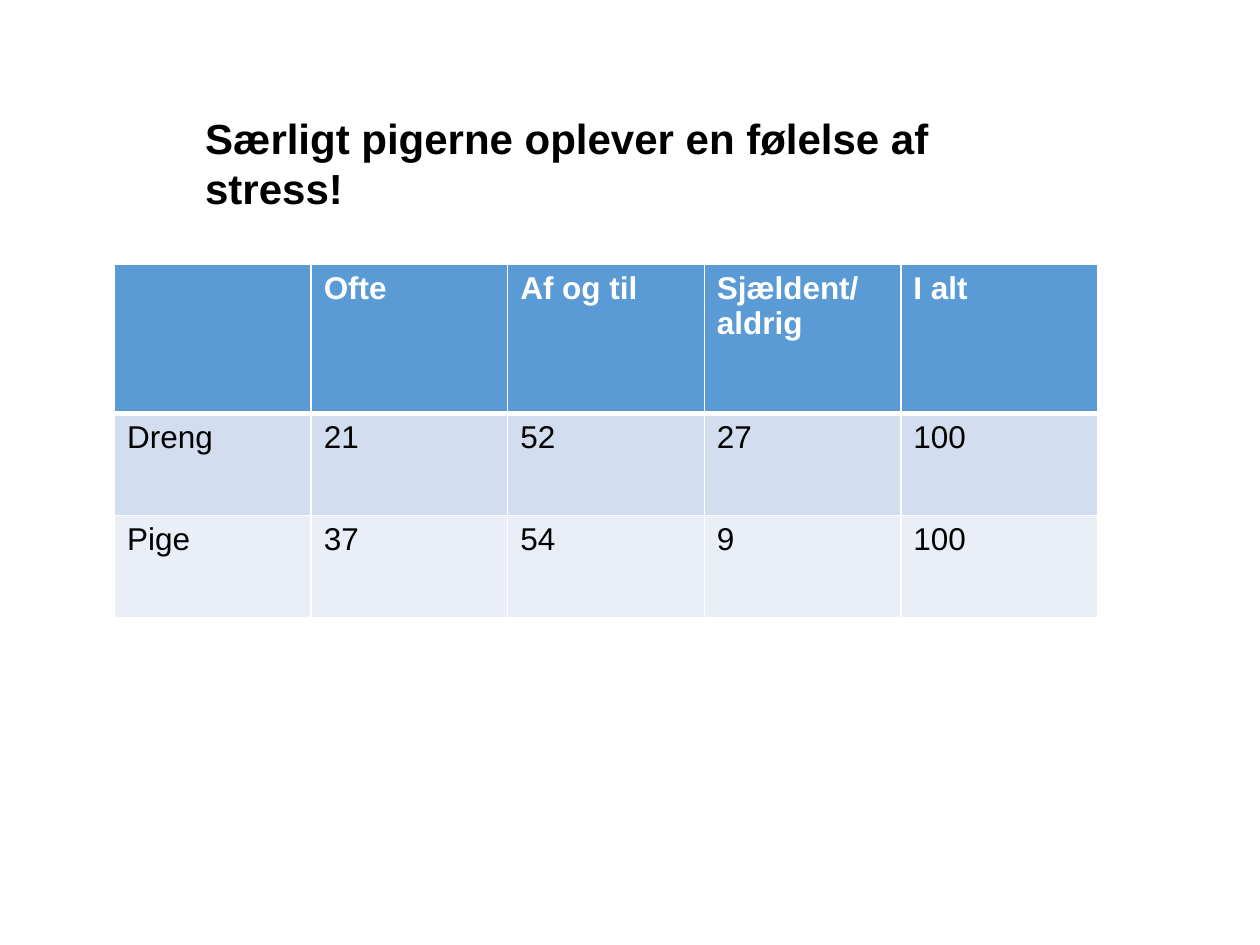
from dataclasses import dataclass

from lxml.etree import SubElement
from pptx import Presentation
from pptx.dml.color import RGBColor
from pptx.oxml.ns import qn
from pptx.util import Inches, Pt

WHITE, BLACK = "FFFFFF", "000000"


@dataclass
class TableRow:
    height: float
    fill: str
    color: str
    bold: bool
    top: float      # border widths in points
    bottom: float
    texts: tuple


ROWS = (
    TableRow(1.18, "5B9BD5", WHITE, True, 1, 3,
             ("", "Ofte", "Af og til", "Sjældent/aldrig", "I alt")),
    TableRow(0.81, "D2DEEF", BLACK, False, 3, 1,
             ("Dreng", "21", "52", "27", "100")),
    TableRow(0.81, "EAEFF7", BLACK, False, 1, 1,
             ("Pige", "37", "54", "9", "100")),
)
COL_WIDTH = 1.56


def rgb(value: str) -> RGBColor:
    return RGBColor.from_string(value)


def write(tf, text: str, size: float, color: str, bold: bool) -> None:
    r = tf.paragraphs[0].add_run()
    r.text = text
    for name, value in {"name": "Arial", "size": Pt(size), "bold": bold}.items():
        setattr(r.font, name, value)
    r.font.color.rgb = rgb(color)


def add_borders(cell, row: TableRow) -> None:
    """Draw white cell borders; call before the fill, which must follow them."""
    tc_pr = cell._tc.get_or_add_tcPr()
    widths = {"lnL": 1, "lnR": 1, "lnT": row.top, "lnB": row.bottom}
    for tag, width in widths.items():
        ln = SubElement(tc_pr, qn(f"a:{tag}"), w=str(Pt(width)))
        fill = SubElement(ln, qn("a:solidFill"))
        SubElement(fill, qn("a:srgbClr"), val=WHITE)


def add_results(s, left: float, top: float) -> None:
    n_cols = len(ROWS[0].texts)
    height = sum(row.height for row in ROWS)
    table = s.shapes.add_table(len(ROWS), n_cols, Inches(left), Inches(top),
                               Inches(COL_WIDTH * n_cols), Inches(height)).table
    for col in table.columns:
        col.width = Inches(COL_WIDTH)
    for table_row, row in zip(table.rows, ROWS):
        table_row.height = Inches(row.height)
        for cell, text in zip(table_row.cells, row.texts):
            add_borders(cell, row)
            cell.fill.solid()
            cell.fill.fore_color.rgb = rgb(row.fill)
            if text:
                write(cell.text_frame, text, 18, row.color, row.bold)


def main() -> None:
    prs = Presentation()
    prs.slide_width, prs.slide_height = Inches(10), Inches(7.5)
    s = prs.slides.add_slide(prs.slide_layouts[6])

    # Table of answers by gender
    add_results(s, 0.91, 2.1)

    # Heading
    box = s.shapes.add_textbox(Inches(1.53), Inches(0.84), Inches(7.01), Inches(0.91))
    box.text_frame.word_wrap = True
    write(box.text_frame, "Særligt pigerne oplever en følelse af stress!", 24, BLACK, True)

    prs.save("out.pptx")


if __name__ == "__main__":
    main()
